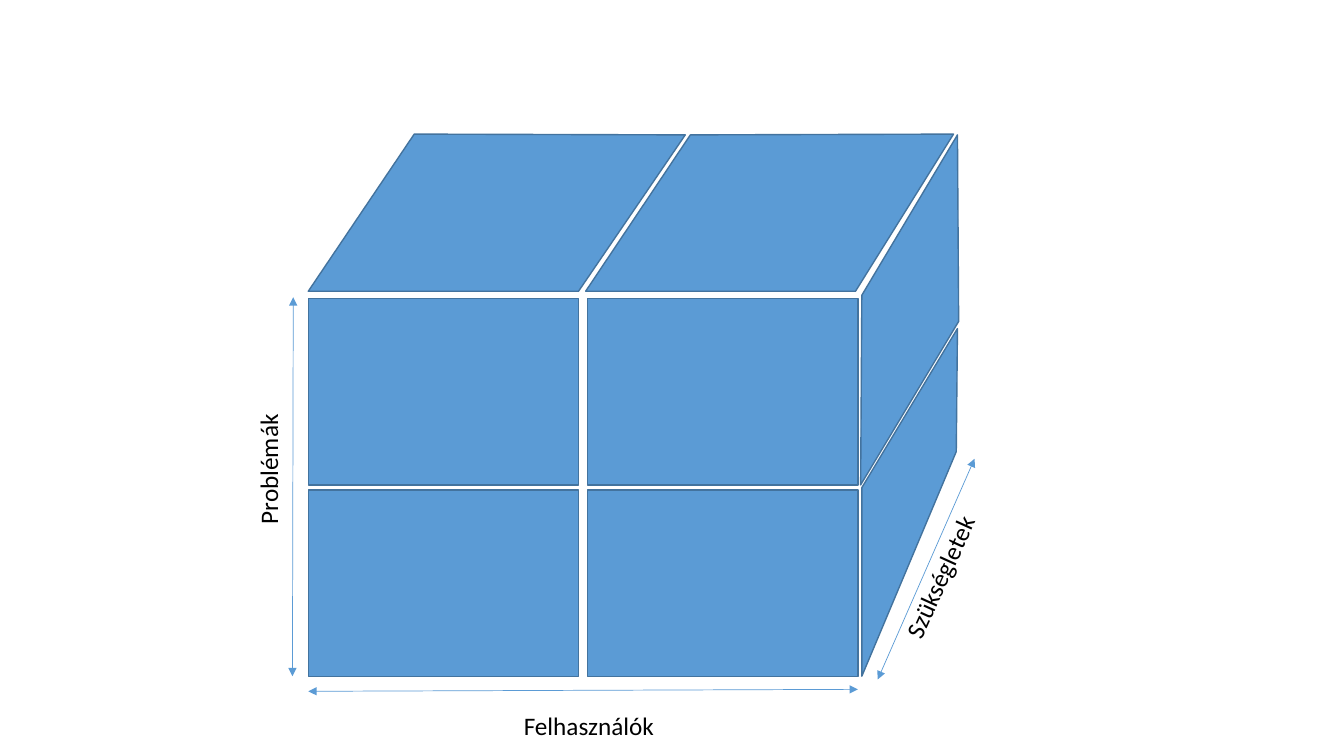
import dataclasses
import itertools

import pptx
import pptx.dml.color
import pptx.enum.shapes
import pptx.enum.text
import pptx.oxml
import pptx.oxml.ns
import pptx.presentation
import pptx.shapes.base
import pptx.slide
import pptx.util

Cm = pptx.util.Cm
Pt = pptx.util.Pt
RGBColor = pptx.dml.color.RGBColor
Point = tuple[float, float]

FACE_BLUE = RGBColor(0x5B, 0x9B, 0xD5)
EDGE_BLUE = RGBColor(0x43, 0x73, 0x9E)
BLACK = RGBColor(0, 0, 0)

FRONT_LEFT, FRONT_TOP = 7.77, 7.52
CELL_WIDTH, CELL_HEIGHT = 6.81, 4.7
COLUMN_STEP, ROW_STEP = 7.04, 4.83


@dataclasses.dataclass(frozen=True)
class Face:
    corners: tuple[Point, ...]


@dataclasses.dataclass(frozen=True)
class Axis:
    start: Point
    end: Point
    label: str
    label_left: float
    label_top: float
    label_width: float
    rotation: float = 0


SIDE_FACES = (
    Face(((21.72, 12.29), (24.13, 8.28), (24.1, 11.38), (21.72, 17.04))),
    Face(((21.72, 7.44), (24.13, 3.4), (24.16, 8.1), (21.69, 12.22))),
)
TOP_FACES = (
    Face(((17.4, 3.4), (24.03, 3.38), (21.56, 7.34), (14.76, 7.34))),
    Face(((10.44, 3.38), (17.27, 3.4), (14.58, 7.34), (7.77, 7.34))),
)
AXES = (
    Axis((7.77, 17.42), (21.62, 17.37), "Felhasználók", 12.95, 17.78, 3.84),
    Axis((7.37, 17.04), (7.39, 7.49), "Problémák", 5.11, 11.3, 3.3, 270),
    Axis((22.12, 17.12), (24.56, 11.56), "Szükségletek", 21.77, 14, 3.84, 294.5),
)


def format_face(shape: pptx.shapes.base.BaseShape) -> None:
    shape.shadow.inherit = False
    shape.fill.solid()
    shape.fill.fore_color.rgb = FACE_BLUE
    shape.line.color.rgb = EDGE_BLUE
    shape.line.width = Pt(1)


def draw_face(slide: pptx.slide.Slide, face: Face) -> None:
    points = [(Cm(x), Cm(y)) for x, y in face.corners]
    builder = slide.shapes.build_freeform(*points[0])
    builder.add_line_segments(points[1:], close=True)
    format_face(builder.convert_to_shape())


def draw_front(slide: pptx.slide.Slide) -> None:
    for row, column in itertools.product(range(2), repeat=2):
        format_face(slide.shapes.add_shape(
            pptx.enum.shapes.MSO_SHAPE.RECTANGLE,
            Cm(FRONT_LEFT + column * COLUMN_STEP),
            Cm(FRONT_TOP + row * ROW_STEP),
            Cm(CELL_WIDTH),
            Cm(CELL_HEIGHT),
        ))


def add_text(
    slide: pptx.slide.Slide,
    text: str,
    *,
    left: float,
    top: float,
    width: float,
    height: float = 1.02,
    rotation: float = 0,
    size: float = 18,
    font: str = "Calibri",
    color: RGBColor = BLACK,
) -> None:
    shape = slide.shapes.add_textbox(Cm(left), Cm(top), Cm(width), Cm(height))
    shape.rotation = rotation
    shape.text_frame.word_wrap = False
    shape.text_frame.auto_size = pptx.enum.text.MSO_AUTO_SIZE.SHAPE_TO_FIT_TEXT
    run = shape.text_frame.paragraphs[0].add_run()
    run.text = text
    run.font.size = Pt(size)
    run.font.name = font
    run.font.color.rgb = color


def draw_axis(slide: pptx.slide.Slide, axis: Axis) -> None:
    connector = slide.shapes.add_connector(
        pptx.enum.shapes.MSO_CONNECTOR.STRAIGHT,
        *(Cm(value) for value in axis.start + axis.end),
    )
    connector.line.color.rgb = FACE_BLUE
    connector.line.width = Pt(0.5)
    properties = connector._element.spPr
    line = properties.find(pptx.oxml.ns.qn("a:ln"))
    for end in ("headEnd", "tailEnd"):
        line.append(pptx.oxml.parse_xml(
            f'<a:{end} {pptx.oxml.ns.nsdecls("a")} type="triangle"/>'
        ))
    properties.append(pptx.oxml.parse_xml(
        f'<a:effectLst {pptx.oxml.ns.nsdecls("a")}/>'
    ))
    add_text(
        slide,
        axis.label,
        left=axis.label_left,
        top=axis.label_top,
        width=axis.label_width,
        rotation=axis.rotation,
    )


def main() -> None:
    presentation: pptx.presentation.Presentation = pptx.Presentation()
    presentation.slide_width = Cm(33.87)
    presentation.slide_height = Cm(19.05)
    slide = presentation.slides.add_slide(presentation.slide_layouts[6])
    draw_front(slide)
    for face in SIDE_FACES + TOP_FACES:
        draw_face(slide, face)
    for axis in AXES:
        draw_axis(slide, axis)
    presentation.save("out.pptx")


if __name__ == "__main__":
    main()
